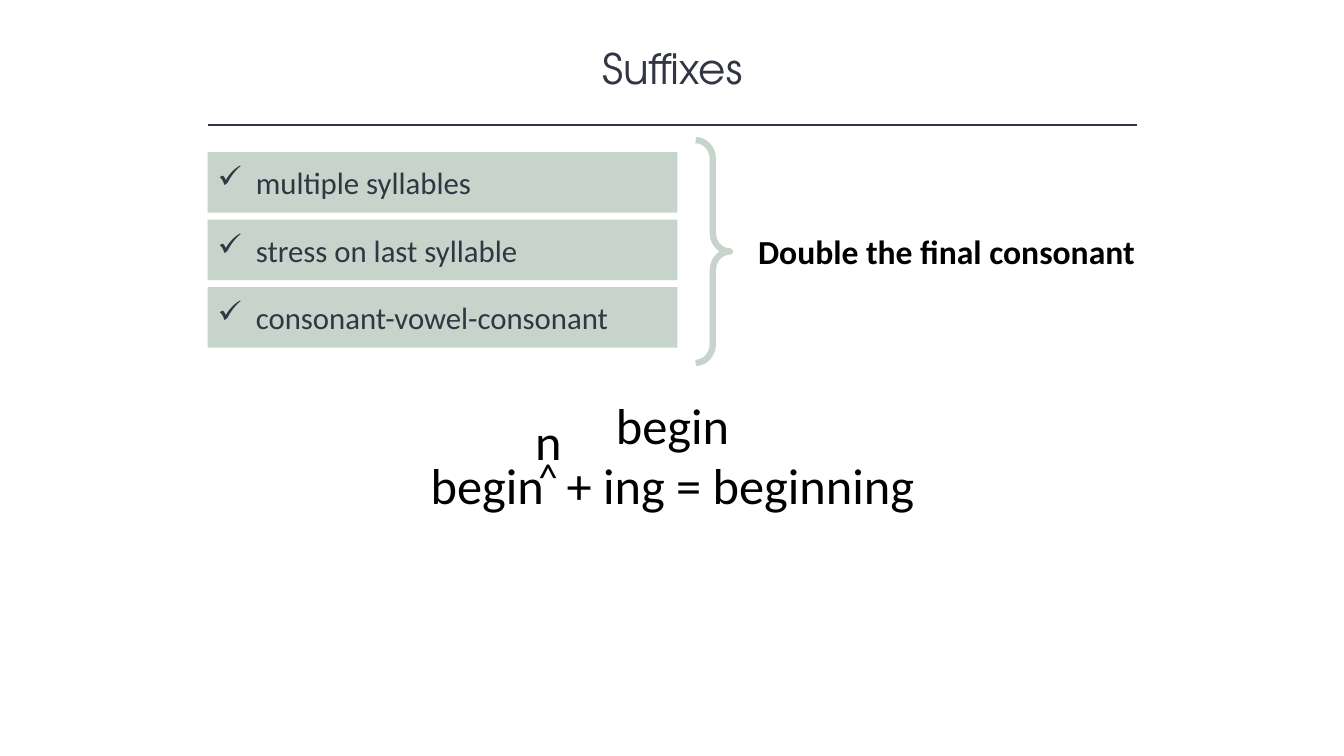
from lxml import etree
from pptx import Presentation
from pptx.dml.color import RGBColor
from pptx.enum.shapes import MSO_CONNECTOR, MSO_SHAPE
from pptx.enum.text import MSO_ANCHOR, PP_ALIGN
from pptx.oxml.ns import qn
from pptx.util import Inches, Pt

SLATE = RGBColor(0x32, 0x35, 0x42)
SAGE = RGBColor(0xC7, 0xD4, 0xCB)
WHITE = RGBColor(0xFF, 0xFF, 0xFF)
BLACK = RGBColor(0, 0, 0)

CONDITIONS = ["multiple syllables", "stress on last syllable", "consonant-vowel-consonant"]


def write(frame, lines, size, color=BLACK, font="Calibri", bold=False, align=PP_ALIGN.LEFT, wrap=True):
    frame.word_wrap = wrap
    frame.text = "\n".join(lines)
    for paragraph in frame.paragraphs:
        paragraph.alignment = align
        paragraph.font.name = font
        paragraph.font.size = Pt(size)
        paragraph.font.bold = bold
        paragraph.font.color.rgb = color


def add_label(slide, box, line, size, **style):
    label = slide.shapes.add_textbox(*map(Inches, box))
    write(label.text_frame, [line], size, **style)


def add_panel(slide, box, fill):
    panel = slide.shapes.add_shape(MSO_SHAPE.RECTANGLE, *map(Inches, box))
    panel.shadow.inherit = False
    panel.fill.solid()
    panel.fill.fore_color.rgb = fill
    panel.line.fill.background()
    return panel


def add_check(paragraph):
    properties = paragraph._p.get_or_add_pPr()
    properties.set("marL", str(Inches(0.38)))
    properties.set("indent", str(-Inches(0.38)))
    etree.SubElement(properties, qn("a:buChar")).set("char", "✓")


def add_heading(slide, left, top, width):
    add_label(slide, (left - 0.39, top, width + 0.78, 0.61), "Suffixes", 30,
              color=SLATE, font="TeX Gyre Adventor", align=PP_ALIGN.CENTER)
    rule_y = Inches(top + 0.87)
    rule = slide.shapes.add_connector(
        MSO_CONNECTOR.STRAIGHT, Inches(left), rule_y, Inches(left + width), rule_y)
    rule.line.color.rgb = SLATE
    rule.line.width = Pt(1)
    etree.SubElement(rule._element.spPr, qn("a:effectLst"))


def add_conditions(slide, left, top, width, row_height, pitch):
    for row, condition in enumerate(CONDITIONS):
        panel = add_panel(slide, (left, top + row * pitch, width, row_height), SAGE)
        panel.text_frame.vertical_anchor = MSO_ANCHOR.MIDDLE
        write(panel.text_frame, [condition], 22, color=SLATE)
        add_check(panel.text_frame.paragraphs[0])


def add_conclusion(slide, left, top, height):
    brace = slide.shapes.add_shape(
        MSO_SHAPE.RIGHT_BRACE, Inches(left), Inches(top), Inches(0.34), Inches(height))
    brace.shadow.inherit = False
    brace.adjustments[0] = 0.538
    brace.fill.background()
    brace.line.color.rgb = SAGE
    brace.line.width = Pt(4.5)
    add_label(slide, (left + 0.52, top + height / 2 - 0.25, 3.98, 0.5),
              "Double the final consonant", 24, bold=True, wrap=False)


def add_example(slide, left, top, width, height):
    panel = add_panel(slide, (left, top, width, height), WHITE)
    panel.text_frame.vertical_anchor = MSO_ANCHOR.TOP
    write(panel.text_frame, ["begin", "begin  + ing = beginning"], 36, align=PP_ALIGN.CENTER)
    add_label(slide, (left + 2.05, top + 0.16, 0.47, 0.71), "n", 36, wrap=False)
    add_label(slide, (left + 2.08, top + 0.58, 0.32, 0.57), "^", 28)


def main():
    presentation = Presentation()
    presentation.slide_width = Inches(13.33)
    presentation.slide_height = Inches(7.5)
    slide = presentation.slides.add_slide(presentation.slide_layouts[6])
    add_heading(slide, 2.06, 0.37, 9.22)
    add_conditions(slide, 2.06, 1.51, 4.66, 0.6, 0.67)
    add_conclusion(slide, 6.9, 1.39, 2.21)
    add_example(slide, 3.16, 3.86, 7.02, 1.31)
    presentation.save("out.pptx")


if __name__ == "__main__":
    main()
